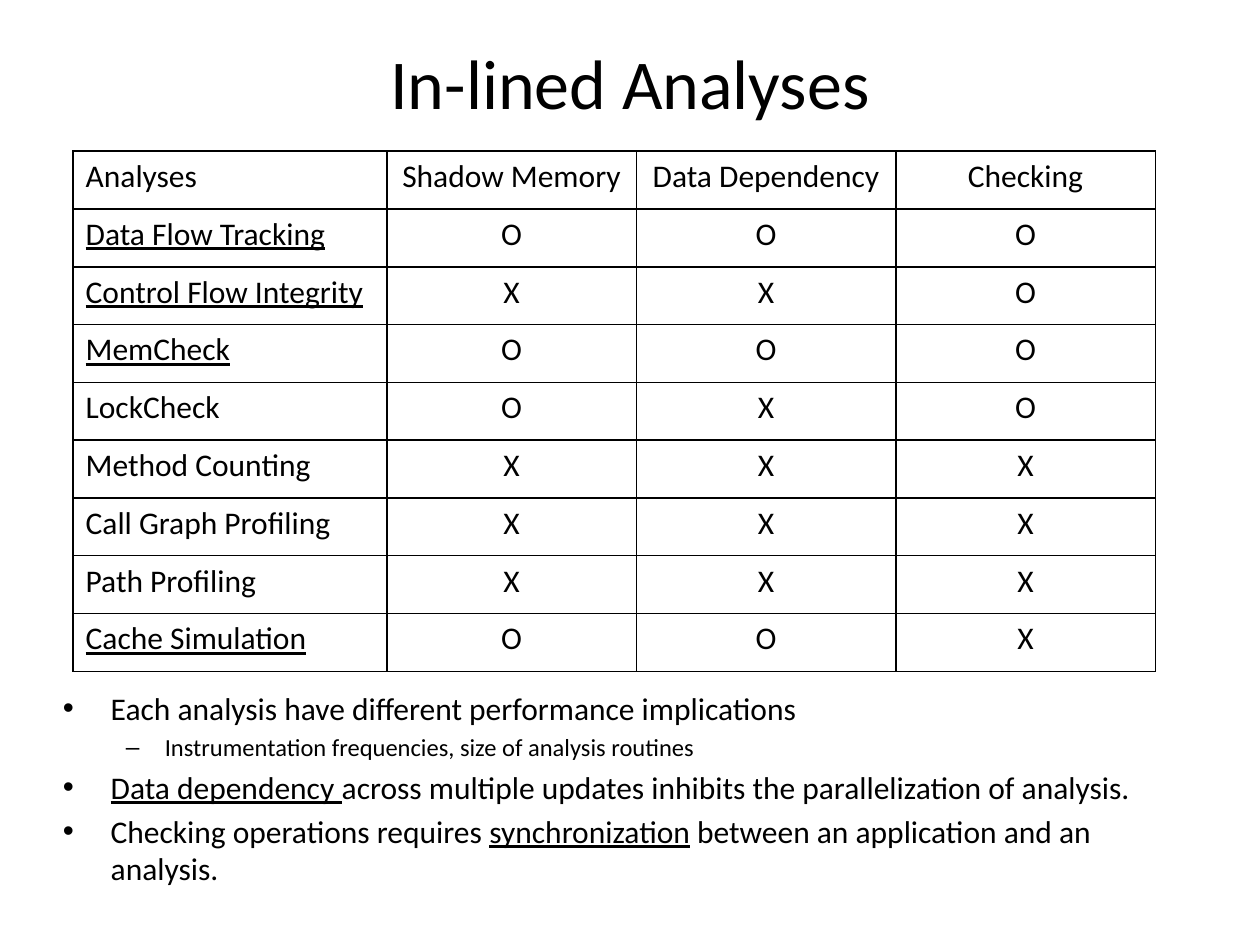
from dataclasses import dataclass

import pptx
import pptx.dml.color
import pptx.enum.text
import pptx.oxml
import pptx.oxml.ns
import pptx.util
from pptx.util import Inches

ALIGN = pptx.enum.text.PP_ALIGN
ANCHOR = pptx.enum.text.MSO_ANCHOR
NS = pptx.oxml.ns.nsdecls("a")


@dataclass(frozen=True)
class Theme:
    font: str = "Calibri"
    ink: str = "000000"
    title: int = 40
    text: int = 18
    detail: int = 14
    border: float = 1


@dataclass(frozen=True)
class Analysis:
    name: str
    marks: str
    underline: bool = False


@dataclass(frozen=True)
class Run:
    text: str
    underline: bool = False


@dataclass(frozen=True)
class Level:
    size: int
    bullet: str
    margin: float
    hanging: float


@dataclass(frozen=True)
class Point:
    runs: tuple[Run, ...]
    level: int = 0


THEME = Theme()
LEVELS = (Level(THEME.text, "•", 0.38, 0.38), Level(THEME.detail, "–", 0.81, 0.31))
HEADERS = ("Analyses", "Shadow Memory", "Data Dependency", "Checking")
COLUMN_WIDTHS = (2.49, 1.98, 2.06, 2.06)
ANALYSES = (
    Analysis("Data Flow Tracking", "OOO", True),
    Analysis("Control Flow Integrity", "XXO", True),
    Analysis("MemCheck", "OOO", True),
    Analysis("LockCheck", "OXO"),
    Analysis("Method Counting", "XXX"),
    Analysis("Call Graph Profiling", "XXX"),
    Analysis("Path Profiling", "XXX"),
    Analysis("Cache Simulation", "OOX", True),
)
POINTS = (
    Point((Run("Each analysis have different performance implications"),)),
    Point((Run("Instrumentation frequencies, size of analysis routines"),), 1),
    Point((
        Run("Data dependency ", True),
        Run("across multiple updates inhibits the parallelization of analysis."),
    )),
    Point((
        Run("Checking operations requires "),
        Run("synchronization", True),
        Run(" between an application and an analysis."),
    )),
)


def set_all(target, values: dict) -> None:
    for name, value in values.items():
        setattr(target, name, value)


def place(shape, left: float, top: float, width: float, height: float) -> None:
    box = {"left": left, "top": top, "width": width, "height": height}
    set_all(shape, {name: Inches(value) for name, value in box.items()})


def add_run(p, run: Run, size: int) -> None:
    r = p.add_run()
    r.text = run.text
    set_all(r.font, {"name": THEME.font, "size": pptx.util.Pt(size), "underline": run.underline})
    r.font.color.rgb = pptx.dml.color.RGBColor.from_string(THEME.ink)


def add_title(s, text: str) -> None:
    sp = s.shapes.title
    place(sp, 0.5, 0.18, 9, 0.94)
    tf = sp.text_frame
    set_all(tf, {"vertical_anchor": ANCHOR.MIDDLE, "word_wrap": True})
    p = tf.paragraphs[0]
    p.alignment = ALIGN.CENTER
    add_run(p, Run(text), THEME.title)


def format_cell(cell, run: Run, alignment) -> None:
    p = cell.text_frame.paragraphs[0]
    p.alignment = alignment
    add_run(p, run, THEME.text)
    tc_pr = cell._tc.get_or_add_tcPr()
    for side in ("lnL", "lnR", "lnT", "lnB"):
        tc_pr.append(pptx.oxml.parse_xml(
            f'<a:{side} {NS} w="{pptx.util.Pt(THEME.border)}"><a:solidFill>'
            f'<a:srgbClr val="{THEME.ink}"/></a:solidFill></a:{side}>'
        ))
    cell.fill.background()


def add_analysis_table(s) -> None:
    rows = [[Run(header) for header in HEADERS]]
    for analysis in ANALYSES:
        rows.append([Run(analysis.name, analysis.underline), *map(Run, analysis.marks)])
    frame = s.shapes.add_table(
        len(rows), len(HEADERS), Inches(0.58), Inches(1.2), Inches(8.59), Inches(4.13)
    )
    table = frame.table
    set_all(table, {"first_row": False, "horz_banding": False})
    for column, width in zip(table.columns, COLUMN_WIDTHS):
        column.width = Inches(width)
    for i, row in enumerate(rows):
        for j, run in enumerate(row):
            format_cell(table.cell(i, j), run, ALIGN.CENTER if j else ALIGN.LEFT)


def add_points(s, points: tuple[Point, ...]) -> None:
    tf = s.shapes.add_textbox(Inches(0.4), Inches(5.42), Inches(9.21), Inches(2.01)).text_frame
    tf.word_wrap = True
    for i, point in enumerate(points):
        p = tf.add_paragraph() if i else tf.paragraphs[0]
        level = LEVELS[point.level]
        set_all(p, {"level": point.level, "space_before": pptx.util.Pt(level.size * 0.2)})
        p_pr = p._p.get_or_add_pPr()
        p_pr.set("marL", str(Inches(level.margin)))
        p_pr.set("indent", str(-Inches(level.hanging)))
        p_pr.append(pptx.oxml.parse_xml(f'<a:buFont {NS} typeface="Arial"/>'))
        p_pr.append(pptx.oxml.parse_xml(f'<a:buChar {NS} char="{level.bullet}"/>'))
        for run in point.runs:
            add_run(p, run, level.size)


def main() -> None:
    prs = pptx.Presentation()
    set_all(prs, {"slide_width": Inches(10), "slide_height": Inches(7.5)})
    s = prs.slides.add_slide(prs.slide_layouts.get_by_name("Title Only"))
    add_title(s, "In-lined Analyses")
    add_analysis_table(s)
    add_points(s, POINTS)
    prs.save("out.pptx")


if __name__ == "__main__":
    main()
